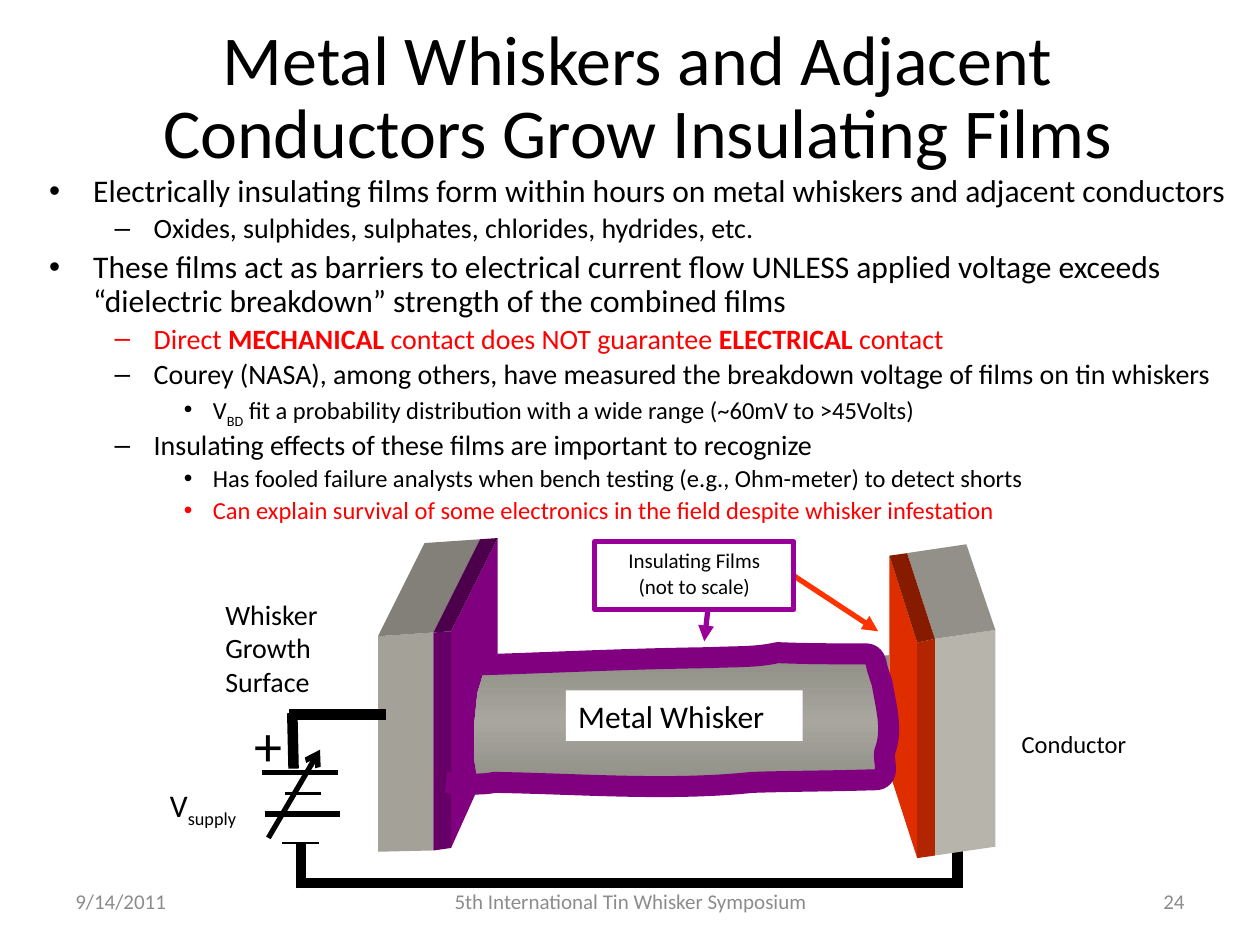
from copy import deepcopy

from lxml.etree import SubElement
from pptx import Presentation
from pptx.dml.color import RGBColor
from pptx.enum.shapes import MSO_CONNECTOR, MSO_SHAPE
from pptx.enum.text import MSO_ANCHOR, PP_ALIGN
from pptx.oxml.ns import qn
from pptx.util import Inches, Pt

LEFT, CENTER, RIGHT = PP_ALIGN.LEFT, PP_ALIGN.CENTER, PP_ALIGN.RIGHT
BLACK, GREY, RED, PURPLE = "000000", "8C8C8C", "FF0000", "990099"
color = RGBColor.from_string


def add_span(para, text, size, hue, **formats):
    """Add a run; a subscript flag lowers the text."""
    span = para.add_run()
    span.text = text
    if formats.pop("subscript", False):
        span._r.get_or_add_rPr().set("baseline", "-25000")
    for name, value in {"name": "Calibri", "size": Pt(size), **formats}.items():
        setattr(span.font, name, value)
    span.font.color.rgb = color(hue)


def add_outline(contours, close=True):
    """Draw one freeform from contours given in inches."""
    contours = [[(Inches(x), Inches(y)) for x, y in points] for points in contours]
    builder = page.shapes.build_freeform(*contours[0][0], scale=1.0)
    for index, corners in enumerate(contours):
        if index:
            builder.move_to(*corners[0])
        builder.add_line_segments(corners[1:], close=close)
    shape = builder.convert_to_shape()
    shape.shadow.inherit = False
    return shape


deck = Presentation()
deck.slide_width, deck.slide_height = Inches(10), Inches(7.5)
page = deck.slides.add_slide(deck.slide_layouts[6])

# Title
box = page.shapes.add_textbox(Inches(0.56), Inches(0.21), Inches(9), Inches(1.17))
frame = box.text_frame
for name, value in {"word_wrap": True, "vertical_anchor": MSO_ANCHOR.MIDDLE, "margin_left": 0,
                    "margin_right": 0, "margin_top": 0, "margin_bottom": 0}.items():
    setattr(frame, name, value)
para = frame.paragraphs[0]
para.alignment, para.line_spacing = CENTER, 0.87
add_span(para, "Metal Whiskers and Adjacent Conductors Grow Insulating Films", 40, BLACK)

# Bulleted body: level, colour, spans
levels = [("•", 18, 0.46, -0.35), ("–", 16, 0.94, -0.31), ("•", 14, 1.41, -0.23)]
bold, subscript = {"bold": True}, {"subscript": True}
points = [
    (0, BLACK, [("Electrically insulating films form within hours on metal whiskers "
                 "and adjacent conductors", {})]),
    (1, BLACK, [("Oxides, sulphides, sulphates, chlorides, hydrides, etc.", {})]),
    (0, BLACK, [("These films act as barriers to electrical current flow UNLESS applied voltage "
                 "exceeds “dielectric breakdown” strength of the combined films", {})]),
    (1, RED, [("Direct ", {}), ("MECHANICAL", bold), (" contact does NOT guarantee ", {}),
              ("ELECTRICAL", bold), (" contact", {})]),
    (1, BLACK, [("Courey (NASA), among others, have measured the breakdown voltage "
                 "of films on tin whiskers", {})]),
    (2, BLACK, [("V", {}), ("BD", subscript),
                (" fit a probability distribution with a wide range (~60mV to >45Volts)", {})]),
    (1, BLACK, [("Insulating effects of these films are important to recognize", {})]),
    (2, BLACK, [("Has fooled failure analysts when bench testing (e.g., Ohm-meter) "
                 "to detect shorts", {})]),
    (2, RED, [("Can explain survival of some electronics in the field "
               "despite whisker infestation", {})]),
]
box = page.shapes.add_textbox(Inches(0.28), Inches(1.39), Inches(9.61), Inches(2.84))
frame = box.text_frame
for name in ("left", "right", "top", "bottom"):
    setattr(frame, f"margin_{name}", 0)
frame.word_wrap = True
for index, (level, hue, spans) in enumerate(points):
    bullet, size, margin, indent = levels[level]
    para = frame.add_paragraph() if index else frame.paragraphs[0]
    para.level, para.line_spacing = level, 0.9
    if index:
        para.space_before = Pt(size * 0.2)
    properties = para._p.get_or_add_pPr()
    properties.set("marL", str(Inches(margin)))
    properties.set("indent", str(Inches(indent)))
    SubElement(properties, qn("a:buFont")).set("typeface", "Arial")
    SubElement(properties, qn("a:buChar")).set("char", bullet)
    for text, formats in spans:
        add_span(para, text, size, hue, **formats)

# Conductor wire, hidden at its top by the conductor, then the solids
wire_style = (BLACK, 6, None)
lines = [
    (7.6, 7.02, 7.6, 6.51, *wire_style),
    (2.35, 7.01, 7.64, 7.01, *wire_style),
    (2.33, 6.1, 2.32, 5.66, *wire_style),
    (2.39, 7.05, 2.39, 6.69, *wire_style),
    (3.06, 5.67, 2.29, 5.67, *wire_style),
    (2.08, 6.13, 2.68, 6.13, BLACK, 3, None),
    (2.1, 6.46, 2.7, 6.46, BLACK, 3, None),
    (2.24, 6.69, 2.53, 6.69, BLACK, 1.5, None),
    (2.26, 6.3, 2.55, 6.3, BLACK, 1.5, None),
    (2.13, 6.65, 2.54, 5.95, BLACK, 3, "arrow"),
    (5.63, 4.73, 5.59, 5.09, PURPLE, 3, "triangle"),
    (6.3, 4.57, 6.97, 5.01, "FF3300", 3, "triangle"),
]

# Solids: colour and faces, each face with its shading
solids = [
    ("A4A199", [("norm", [(3, 5.05), (3.44, 5.02), (3.44, 6.75), (3, 6.76)]),
                ("darkenLess", [(3, 5.05), (3.37, 4.31), (3.81, 4.28), (3.44, 5.02)])]),
    ("800080", [("norm", [(3.58, 5.01), (3.95, 4.27), (3.95, 5.91), (3.58, 6.73)]),
                ("darkenLess", [(3.44, 5.02), (3.58, 5.01), (3.58, 6.73), (3.44, 6.75)]),
                ("darken", [(3.44, 5.02), (3.81, 4.28), (3.95, 4.27), (3.58, 5.01)])]),
    ("whisker", [("norm", [(3.85, 5.3), (7.06, 5.2), (7.06, 6.2), (3.8, 6.25), (3.76, 6),
                           (3.76, 5.8), (3.79, 5.5)])]),
    ("B7B4AC", [("norm", [(7.42, 5.07), (7.9, 5), (7.9, 6.72), (7.42, 6.79)]),
                ("darkenLess", [(7.2, 4.39), (7.67, 4.32), (7.9, 5), (7.42, 5.07)])]),
    ("E02D00", [("norm", [(7.06, 4.41), (7.28, 5.1), (7.28, 6.81), (7.06, 6.13)]),
                ("darkenLess", [(7.28, 5.1), (7.42, 5.07), (7.42, 6.79), (7.28, 6.81)]),
                ("darken", [(7.06, 4.41), (7.2, 4.39), (7.42, 5.07), (7.28, 5.1)])]),
]
for hue, faces in solids:
    solid = add_outline([corners for shading, corners in faces])
    solid.line.fill.background()
    # Give every face a path of its own so that it can be shaded
    path_list = next(solid._element.iter(qn("a:pathLst")))
    whole = path_list[0]
    steps = list(whole)
    for shading, corners in faces:
        face = SubElement(path_list, qn("a:path"), dict(whole.attrib), fill=shading)
        count = len(corners) + 1
        face.extend(steps[:count])
        steps = steps[count:]
    path_list.remove(whole)
    if hue != "whisker":
        solid.fill.solid()
        solid.fill.fore_color.rgb = color(hue)
        continue
    solid.fill.gradient()
    solid.fill.gradient_angle = 90
    stop_list = solid._element.spPr.find(qn("a:gradFill")).find(qn("a:gsLst"))
    stop_list.insert(1, deepcopy(stop_list[0]))
    for stop, place, shade in zip(solid.fill.gradient_stops, (0, 0.5, 1),
                                  ("8F8E85", "A8A69E", "8F8E85")):
        stop.position, stop.color.rgb = place, color(shade)

# Battery circuit and arrows
for index, (x1, y1, x2, y2, hue, width, head) in enumerate(lines):
    line = page.shapes.add_connector(MSO_CONNECTOR.STRAIGHT, Inches(x1), Inches(y1),
                                     Inches(x2), Inches(y2))
    line.line.color.rgb, line.line.width = color(hue), Pt(width)
    if head:
        SubElement(line.line._get_or_add_ln(), qn("a:tailEnd")).set("type", head)
    SubElement(line._element.spPr, qn("a:effectLst"))
    if index == 0:
        page.shapes._spTree.insert(2, line._element)
conductor_arrow = line

# Insulating film around the whisker, in cubic curves
start = (3.72, 5.28)
curves = [
    ((4.39, 5.26), (4.92, 5.23), (5.64, 5.22)), ((5.81, 5.21), (6, 5.22), (6.17, 5.18)),
    ((6.41, 5.19), (6.64, 5.19), (6.88, 5.19)), ((6.96, 5.2), (6.95, 5.28), (6.97, 5.33)),
    ((6.98, 5.36), (7, 5.42), (7, 5.42)), ((7.03, 5.6), (7.09, 5.8), (7.02, 5.97)),
    ((7.01, 6.04), (7.06, 6.14), (6.99, 6.18)), ((6.97, 6.19), (6.94, 6.19), (6.91, 6.19)),
    ((6.6, 6.2), (6.28, 6.2), (5.97, 6.21)), ((5.3, 6.28), (4.58, 6.22), (3.92, 6.21)),
    ((3.8, 6.24), (3.54, 6.21), (3.54, 6.21)),
]
film = add_outline([[start] + [curve[-1] for curve in curves]], close=False)
film.fill.background()
film.line.color.rgb, film.line.width = color("800080"), Pt(12)
segments = list(film._element.iter(qn("a:lnTo")))
for segment, curve in zip(segments, curves):
    segment.tag = qn("a:cubicBezTo")
    segment.remove(segment[0])
    for x, y in curve:
        SubElement(segment, qn("a:pt"), x=str(Inches(x) - film.left), y=str(Inches(y) - film.top))

# Labels and footer: place, alignment, anchor, wrap, white fill, size, colour, lines
top, middle = MSO_ANCHOR.TOP, MSO_ANCHOR.MIDDLE
labels = [
    ((4.72, 4.3, 1.58, 0.54), CENTER, top, True, True, 12, BLACK,
     ["Insulating Films", "(not to scale)"]),
    ((1.69, 4.69, 1.07, 0.9), LEFT, top, False, True, 16, BLACK, ["Whisker", "Growth", "Surface"]),
    ((8.01, 5.74, 1.32, 0.33), LEFT, top, True, True, 14, BLACK, ["Conductor"]),
    ((4.49, 5.48, 1.88, 0.4), LEFT, top, False, True, 18, BLACK, ["Metal Whisker"]),
    ((1.92, 5.59, 0.46, 0.63), LEFT, top, False, False, 32, BLACK, ["+"]),
    ((1.25, 6.19, 0.78, 0.4), LEFT, top, False, False, 18, BLACK, ["V"]),
    ((0.5, 6.95, 2.33, 0.4), LEFT, middle, True, False, 12, GREY, ["9/14/2011"]),
    ((3.42, 6.95, 3.17, 0.4), CENTER, middle, True, False, 12, GREY,
     ["5th International Tin Whisker Symposium"]),
    ((7.17, 6.95, 2.33, 0.4), RIGHT, middle, True, False, 12, GREY, ["24"]),
]
for place, align, anchor, wrap, filled, size, hue, texts in labels:
    place = [Inches(value) for value in place]
    if filled:
        box = page.shapes.add_shape(MSO_SHAPE.RECTANGLE, *place)
        box.shadow.inherit = False
        box.fill.solid()
        box.fill.fore_color.rgb = color("FFFFFF")
        box.line.fill.background()
    else:
        box = page.shapes.add_textbox(*place)
    frame = box.text_frame
    frame.word_wrap, frame.vertical_anchor = wrap, anchor
    for index, text in enumerate(texts):
        para = frame.add_paragraph() if index else frame.paragraphs[0]
        para.alignment = align
        add_span(para, text, size, hue)
    if texts == ["V"]:
        add_span(para, "supply", size, hue, subscript=True)
    if texts[0] == "Insulating Films":
        box.line.color.rgb, box.line.width = color(PURPLE), Pt(3)
        conductor_arrow.begin_connect(box, 3)

deck.save("out.pptx")
